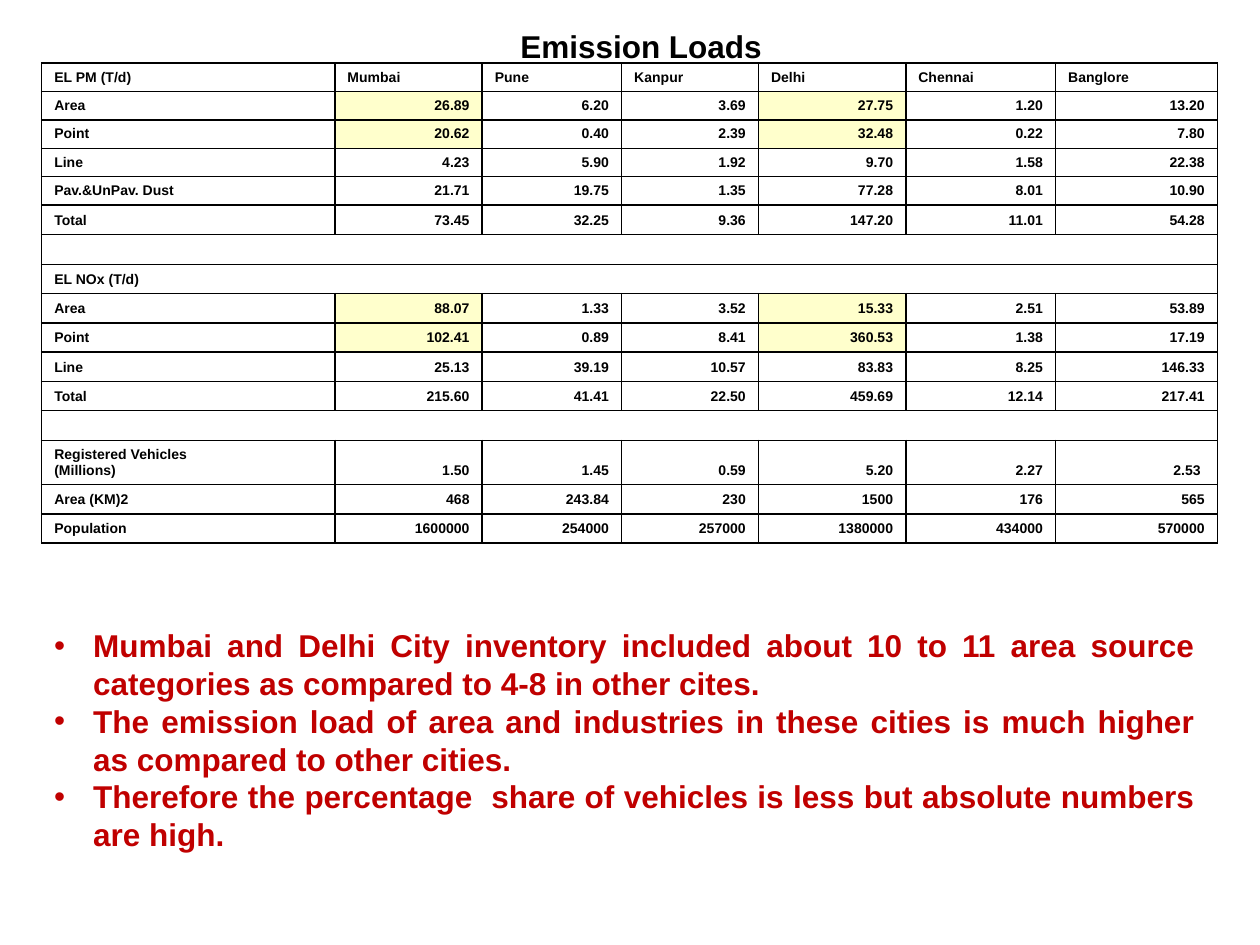
"""Build the Emission Loads slide: a city emissions table with takeaways."""
from lxml import etree
from pptx import Presentation
from pptx.dml.color import RGBColor
from pptx.enum.text import MSO_ANCHOR, MSO_AUTO_SIZE, PP_ALIGN
from pptx.oxml.ns import qn
from pptx.util import Cm, Pt

BLACK = RGBColor(0x00, 0x00, 0x00)
RED = RGBColor(0xC0, 0x00, 0x00)
YELLOW = RGBColor(0xFF, 0xFF, 0xCC)
LEFT, RIGHT, JUSTIFY = PP_ALIGN.LEFT, PP_ALIGN.RIGHT, PP_ALIGN.JUSTIFY
BOTTOM = MSO_ANCHOR.BOTTOM
FIT = MSO_AUTO_SIZE.SHAPE_TO_FIT_TEXT

TITLE = "Emission Loads"
ROWS = [
    ["EL PM (T/d)", "Mumbai", "Pune", "Kanpur", "Delhi", "Chennai", "Banglore"],
    ["Area", "26.89", "6.20", "3.69", "27.75", "1.20", "13.20"],
    ["Point", "20.62", "0.40", "2.39", "32.48", "0.22", "7.80"],
    ["Line", "4.23", "5.90", "1.92", "9.70", "1.58", "22.38"],
    ["Pav.&UnPav. Dust", "21.71", "19.75", "1.35", "77.28", "8.01", "10.90"],
    ["Total", "73.45", "32.25", "9.36", "147.20", "11.01", "54.28"],
    [""],
    ["EL NOx (T/d)"],
    ["Area", "88.07", "1.33", "3.52", "15.33", "2.51", "53.89"],
    ["Point", "102.41", "0.89", "8.41", "360.53", "1.38", "17.19"],
    ["Line", "25.13", "39.19", "10.57", "83.83", "8.25", "146.33"],
    ["Total", "215.60", "41.41", "22.50", "459.69", "12.14", "217.41"],
    [""],
    ["Registered Vehicles\n(Millions)", "1.50", "1.45", "0.59", "5.20", "2.27", "2.53 "],
    ["Area (KM)2", "468", "243.84", "230", "1500", "176", "565"],
    ["Population", "1600000", "254000", "257000", "1380000", "434000", "570000"],
]
BULLETS = [
    "Mumbai and Delhi City inventory included about 10 to 11 area source "
    "categories as compared to 4-8 in other cites. ",
    "The emission load of area and industries in these cities is much higher "
    "as compared to other cities.  ",
    "Therefore the percentage  share of vehicles is less but absolute numbers are high.",
]
COL_WIDTHS = [5.91, 2.97, 2.81, 2.76, 2.97, 3.02, 3.26]
ROW_HEIGHTS = [0.46] * 5 + [0.59] * 8 + [0.71] + [0.59] * 2
HIGHLIGHT_ROWS = ("Area", "Point")
HIGHLIGHT_CITIES = ("Mumbai", "Delhi")
CELL_FONT = {"name": "Arial", "size": Pt(8), "bold": True}
TEXT_FONT = {"name": "Arial", "size": Pt(18), "bold": True}


def write(tf, lines, font, color, align=LEFT, indent=0, bullet=None):
    for i, line in enumerate(lines):
        p = tf.paragraphs[0] if i == 0 else tf.add_paragraph()
        p.alignment = align
        pPr = p._p.get_or_add_pPr()
        if indent:
            pPr.set("marL", str(Cm(indent)))
            pPr.set("indent", str(-Cm(indent)))
        if bullet:
            etree.SubElement(pPr, qn("a:buFont"), typeface="Arial")
            etree.SubElement(pPr, qn("a:buChar"), char=bullet)
        if not line:
            etree.SubElement(p._p, qn("a:endParaRPr"), sz=str(int(font["size"].pt * 100)))
            continue
        r = p.add_run()
        r.text = line
        for name, value in font.items():
            setattr(r.font, name, value)
        r.font.color.rgb = color


def add_borders(cell):
    tcPr = cell._tc.get_or_add_tcPr()
    for side in "LRTB":
        ln = etree.SubElement(tcPr, qn(f"a:ln{side}"), w=str(Pt(1)))
        fill = etree.SubElement(ln, qn("a:solidFill"))
        etree.SubElement(fill, qn("a:srgbClr"), val=str(BLACK))


def add_emission_table(s):
    sp = s.shapes.add_table(len(ROWS), len(COL_WIDTHS), Cm(0.84), Cm(1.27),
                            Cm(sum(COL_WIDTHS)), Cm(9.83))
    table = sp.table
    table.first_row = table.horz_banding = False
    for col, width in zip(table.columns, COL_WIDTHS):
        col.width = Cm(width)
    for row, height in zip(table.rows, ROW_HEIGHTS):
        row.height = Cm(height)
    sp.height = Cm(9.83)
    last = len(COL_WIDTHS) - 1
    for i, values in enumerate(ROWS):
        if len(values) == 1:
            table.cell(i, 0).merge(table.cell(i, last))
        for j, city in enumerate(ROWS[0]):
            cell = table.cell(i, j)
            if not cell.is_spanned:
                add_borders(cell)
                cell.vertical_anchor = BOTTOM
                align = RIGHT if i and j else LEFT
                write(cell.text_frame, values[j].split("\n"), CELL_FONT, BLACK, align, 0.97)
            if values[0] in HIGHLIGHT_ROWS and city in HIGHLIGHT_CITIES:
                cell.fill.solid()
                cell.fill.fore_color.rgb = YELLOW
            else:
                cell.fill.background()


def add_text(s, box, wrap, *content, **layout):
    tf = s.shapes.add_textbox(*map(Cm, box)).text_frame
    tf.word_wrap = wrap
    tf.auto_size = FIT
    write(tf, *content, **layout)


def main():
    prs = Presentation()
    prs.slide_width, prs.slide_height = Cm(25.4), Cm(19.05)
    s = prs.slides.add_slide(prs.slide_layouts[6])
    add_emission_table(s)
    add_text(s, (10.24, 0.43, 5.44, 1.02), False, [TITLE], TEXT_FONT, BLACK)
    add_text(s, (0.84, 12.5, 23.5, 4.88), True, BULLETS, TEXT_FONT, RED,
             align=JUSTIFY, indent=0.79, bullet="•")
    prs.save("out.pptx")


if __name__ == "__main__":
    main()
